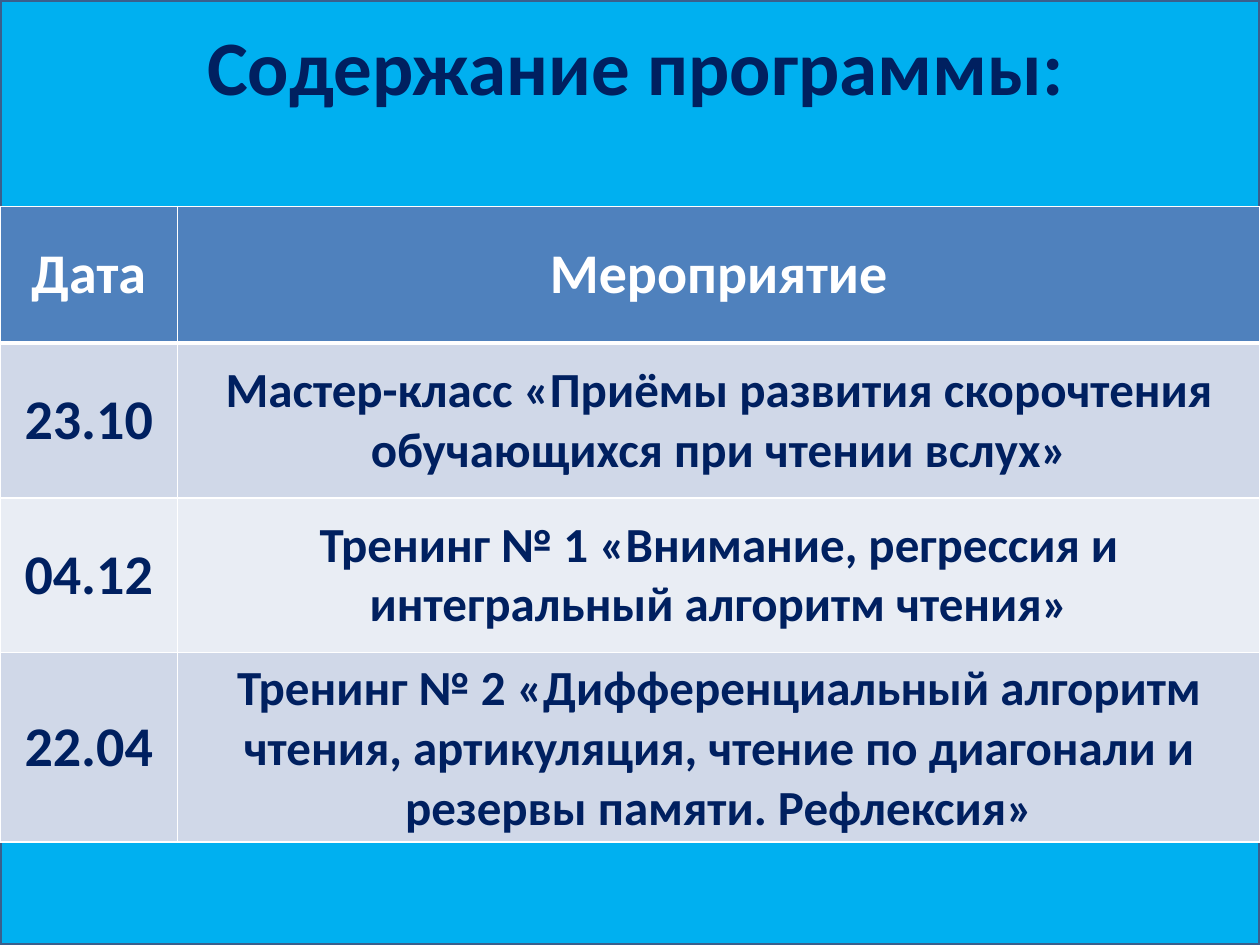
"""Build the programme contents slide: a title above a table of dated events."""
from lxml.etree import SubElement
from pptx import Presentation
from pptx.dml.color import RGBColor
from pptx.enum.shapes import MSO_SHAPE as Shape
from pptx.enum.text import MSO_ANCHOR as Anchor, PP_ALIGN as Align
from pptx.oxml.ns import qn
from pptx.util import Pt

TITLE = "Содержание программы:"
HEADER = ("Дата", "Мероприятие")
EVENTS = [
    ("23.10", "Мастер-класс «Приёмы развития скорочтения обучающихся при чтении вслух»"),
    ("04.12", "Тренинг № 1 «Внимание, регрессия и интегральный алгоритм чтения»"),
    ("22.04", "Тренинг № 2 «Дифференциальный алгоритм чтения, артикуляция, "
              "чтение по диагонали и резервы памяти. Рефлексия»"),
]
WIDTH, HEIGHT = 720, 540
TABLE_TOP = 118
DATE_WIDTH = 101.5
ROW_HEIGHTS = (78, 88.5, 88.5, 78)
NAVY, WHITE, SKY, EDGE = "002060", "FFFFFF", "00B0F0", "3A5F8C"
HEADER_FILL, BANDS = "4F81BD", ("D0D8E8", "E9EDF4")


def paint(target, color):
    target.solid()
    target.fore_color.rgb = RGBColor.from_string(color)


def write(frame, text, size, color):
    paragraph = frame.paragraphs[0]
    paragraph.alignment = Align.CENTER
    run = paragraph.add_run()
    run.text = text
    run.font.name = "Calibri"
    run.font.size = Pt(size)
    run.font.bold = True
    paint(run.font.fill, color)


def add_borders(cell, top, bottom):
    properties = cell._tc.get_or_add_tcPr()
    for side, width in (("L", 1), ("R", 1), ("T", top), ("B", bottom)):
        border = SubElement(properties, qn(f"a:ln{side}"), w=str(Pt(width)))
        fill = SubElement(border, qn("a:solidFill"))
        SubElement(fill, qn("a:srgbClr"), val=WHITE)


def fill_cell(cell, text, size, color, background, top, bottom):
    add_borders(cell, top, bottom)
    paint(cell.fill, background)
    cell.vertical_anchor = Anchor.MIDDLE
    write(cell.text_frame, text, size, color)


def main():
    deck = Presentation()
    deck.slide_width, deck.slide_height = Pt(WIDTH), Pt(HEIGHT)
    shapes = deck.slides.add_slide(deck.slide_layouts[6]).shapes

    backdrop = shapes.add_shape(Shape.RECTANGLE, 0, 0, Pt(WIDTH), Pt(HEIGHT))
    backdrop.shadow.inherit = False
    paint(backdrop.fill, SKY)
    paint(backdrop.line.fill, EDGE)
    backdrop.line.width = Pt(2)

    title = shapes.add_textbox(Pt(39.5), 0, Pt(648), Pt(74)).text_frame
    title.word_wrap = True
    title.vertical_anchor = Anchor.MIDDLE
    write(title, TITLE, 44, NAVY)

    rows = [HEADER, *EVENTS]
    schedule = shapes.add_table(len(rows), len(HEADER), 0, Pt(TABLE_TOP),
                                Pt(WIDTH), Pt(sum(ROW_HEIGHTS))).table
    for column, width in zip(schedule.columns, (DATE_WIDTH, WIDTH - DATE_WIDTH)):
        column.width = Pt(width)
    for index, (row, height) in enumerate(zip(rows, ROW_HEIGHTS)):
        schedule.rows[index].height = Pt(height)
        is_header = index == 0
        color = WHITE if is_header else NAVY
        background = HEADER_FILL if is_header else BANDS[(index - 1) % 2]
        sizes = (32, 32) if is_header else (32, 28)
        top, bottom = 3 if index == 1 else 1, 3 if is_header else 1
        for cell, text, size in zip(schedule.rows[index].cells, row, sizes):
            fill_cell(cell, text, size, color, background, top, bottom)

    deck.save("out.pptx")


if __name__ == "__main__":
    main()
